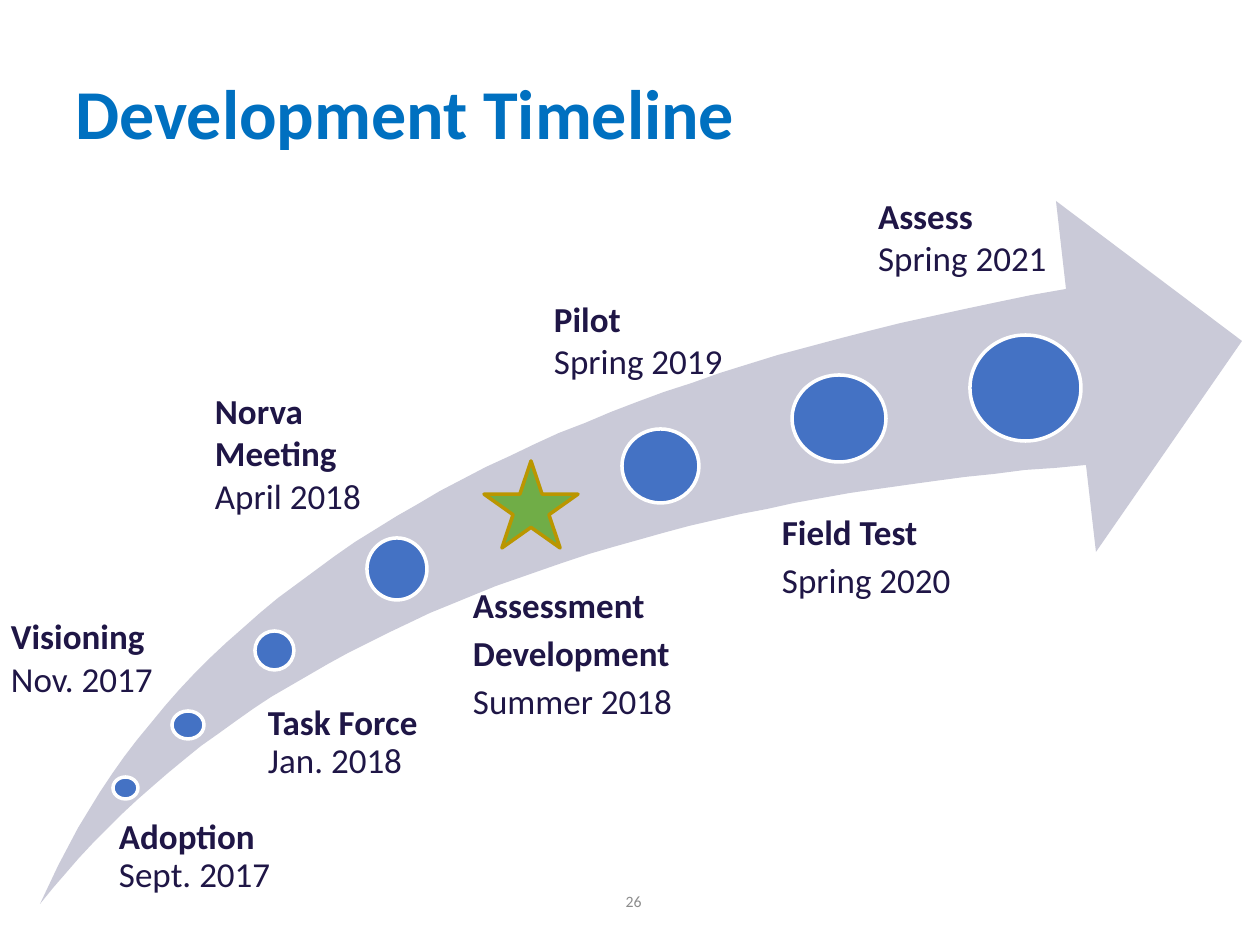
from dataclasses import dataclass

from pptx import Presentation
from pptx.dml.color import RGBColor
from pptx.enum.shapes import MSO_SHAPE
from pptx.enum.text import MSO_ANCHOR, MSO_AUTO_SIZE, PP_ALIGN
from pptx.util import Emu, Pt

EMU_PER_PX = 914400 / 126


def px(length):
    return Emu(round(length * EMU_PER_PX))


@dataclass(frozen=True)
class Theme:
    font: str = "Calibri"
    title: str = "0070C0"
    ink: str = "1F1646"
    muted: str = "8C8C8C"
    arrow: str = "CACAD8"
    milestone: str = "4472C4"
    milestone_edge: str = "FFFFFF"
    star: str = "70AD47"
    star_edge: str = "BA9600"
    title_size: int = 40
    label_size: int = 20
    number_size: int = 9


def write(paragraph, text, *, theme, size, color, bold=False):
    run = paragraph.add_run()
    run.text = text
    run.font.name = theme.font
    run.font.size = Pt(size)
    run.font.bold = bold
    run.font.color.rgb = RGBColor.from_string(color)


def curve(start, control_1, control_2, end, steps=48):
    """Points along a cubic Bezier curve, without its start."""
    points = []
    for step in range(1, steps + 1):
        t = step / steps
        weights = ((1 - t) ** 3, 3 * t * (1 - t) ** 2, 3 * t**2 * (1 - t), t**3)
        corners = (start, control_1, control_2, end)
        points.append(tuple(
            sum(weight * corner[axis] for weight, corner in zip(weights, corners))
            for axis in (0, 1)
        ))
    return points


class TimelineSlide:
    """Holds the theme and the slide being drawn."""

    def __init__(self, slide, theme):
        self.slide = slide
        self.theme = theme

    def title(self, text, left, top, width, height):
        heading = self.slide.shapes.title
        heading.left, heading.top = px(left), px(top)
        heading.width, heading.height = px(width), px(height)
        frame = heading.text_frame
        frame.auto_size = MSO_AUTO_SIZE.NONE
        frame.vertical_anchor = MSO_ANCHOR.MIDDLE
        paragraph = frame.paragraphs[0]
        paragraph.alignment = PP_ALIGN.LEFT
        paragraph.line_spacing = 0.9
        write(paragraph, text, theme=self.theme, size=self.theme.title_size,
              color=self.theme.title, bold=True)

    def text_frame(self, left, top, width, height):
        box = self.slide.shapes.add_textbox(px(left), px(top), px(width), px(height))
        box.text_frame.word_wrap = True
        return box.text_frame

    def label(self, stage, date, left, top, width, height,
              spacing=1.0, inset=21, split=False):
        """Bold stage over its date, in two paragraphs when split."""
        frame = self.text_frame(left, top, width, height)
        frame.margin_left = px(inset)
        frame.margin_top = frame.margin_right = frame.margin_bottom = 0
        style = dict(theme=self.theme, size=self.theme.label_size, color=self.theme.ink)
        paragraph = frame.paragraphs[0]
        paragraph.line_spacing = spacing
        write(paragraph, stage, bold=True, **style)
        if split:
            paragraph = frame.add_paragraph()
            paragraph.line_spacing = spacing
        else:
            paragraph.add_line_break()
        write(paragraph, date, **style)

    def page_number(self, number, left, top, width, height):
        frame = self.text_frame(left, top, width, height)
        frame.vertical_anchor = MSO_ANCHOR.MIDDLE
        paragraph = frame.paragraphs[0]
        paragraph.alignment = PP_ALIGN.RIGHT
        write(paragraph, number, theme=self.theme, size=self.theme.number_size,
              color=self.theme.muted)

    def paint(self, shape, fill, edge=None):
        shape.shadow.inherit = False
        shape.fill.solid()
        shape.fill.fore_color.rgb = RGBColor.from_string(fill)
        if edge:
            shape.line.color.rgb = RGBColor.from_string(edge)
            shape.line.width = Pt(2)
        else:
            shape.line.fill.background()

    def marker(self, kind, left, top, width, height, fill, edge):
        shape = self.slide.shapes.add_shape(
            kind, px(left), px(top), px(width), px(height))
        self.paint(shape, fill, edge)

    def milestone(self, *place):
        self.marker(MSO_SHAPE.OVAL, *place,
                    self.theme.milestone, self.theme.milestone_edge)

    def star(self, *place):
        self.marker(MSO_SHAPE.STAR_5_POINT, *place,
                    self.theme.star, self.theme.star_edge)

    def swoosh(self, tail, upper_bend, head, lower_bend):
        """Curved arrow from its tail around the corners of its head."""
        outline = self.slide.shapes.build_freeform(*tail, scale=EMU_PER_PX)
        outline.add_line_segments(
            curve(tail, *upper_bend, head[0]) + head[1:]
            + curve(head[-1], *lower_bend, tail), close=True)
        self.paint(outline.convert_to_shape(), self.theme.arrow)


MILESTONES = [
    (113, 777, 25, 22),
    (172, 711, 32, 28),
    (255, 631, 39, 39),
    (367, 538, 60, 62),
    (622, 429, 77, 74),
    (792, 375, 94, 87),
    (970, 335, 111, 106),
]

LABELS = [
    ("Adoption", "Sept. 2017", (98, 819, 227, 118), dict(spacing=0.9)),
    ("Visioning", "Nov. 2017", (-10, 615, 204, 152), dict(split=True)),
    ("Task Force", "Jan. 2018", (247, 705, 246, 152), dict(spacing=0.9)),
    ("Norva Meeting", "April 2018", (194, 390, 204, 152), {}),
    ("Assessment Development", "Summer 2018", (452, 577, 300, 106), dict(spacing=1.15)),
    ("Pilot", "Spring 2019", (533, 298, 227, 152), {}),
    ("Field Test", "Spring 2020", (761, 504, 227, 118), dict(spacing=1.15)),
    ("Assess", "Spring 2021", (843, 194, 243, 95), dict(inset=35, split=True)),
]


def main():
    deck = Presentation()
    deck.slide_width, deck.slide_height = px(1260), px(945)
    timeline = TimelineSlide(deck.slides.add_slide(deck.slide_layouts[5]), Theme())

    timeline.title("Development Timeline", 63, 38, 1134, 158)
    timeline.page_number("26", 370, 876, 284, 50)
    timeline.swoosh(
        tail=(40, 904),
        upper_bend=((174, 592), (515, 387)),
        head=[(1066, 289), (1056, 201), (1242, 341), (1096, 552), (1086, 465)],
        lower_bend=((588, 504), (241, 650)),
    )
    for place in MILESTONES:
        timeline.milestone(*place)
    timeline.star(484, 461, 94, 87)
    for stage, date, place, layout in LABELS:
        timeline.label(stage, date, *place, **layout)

    deck.save("out.pptx")


if __name__ == "__main__":
    main()
